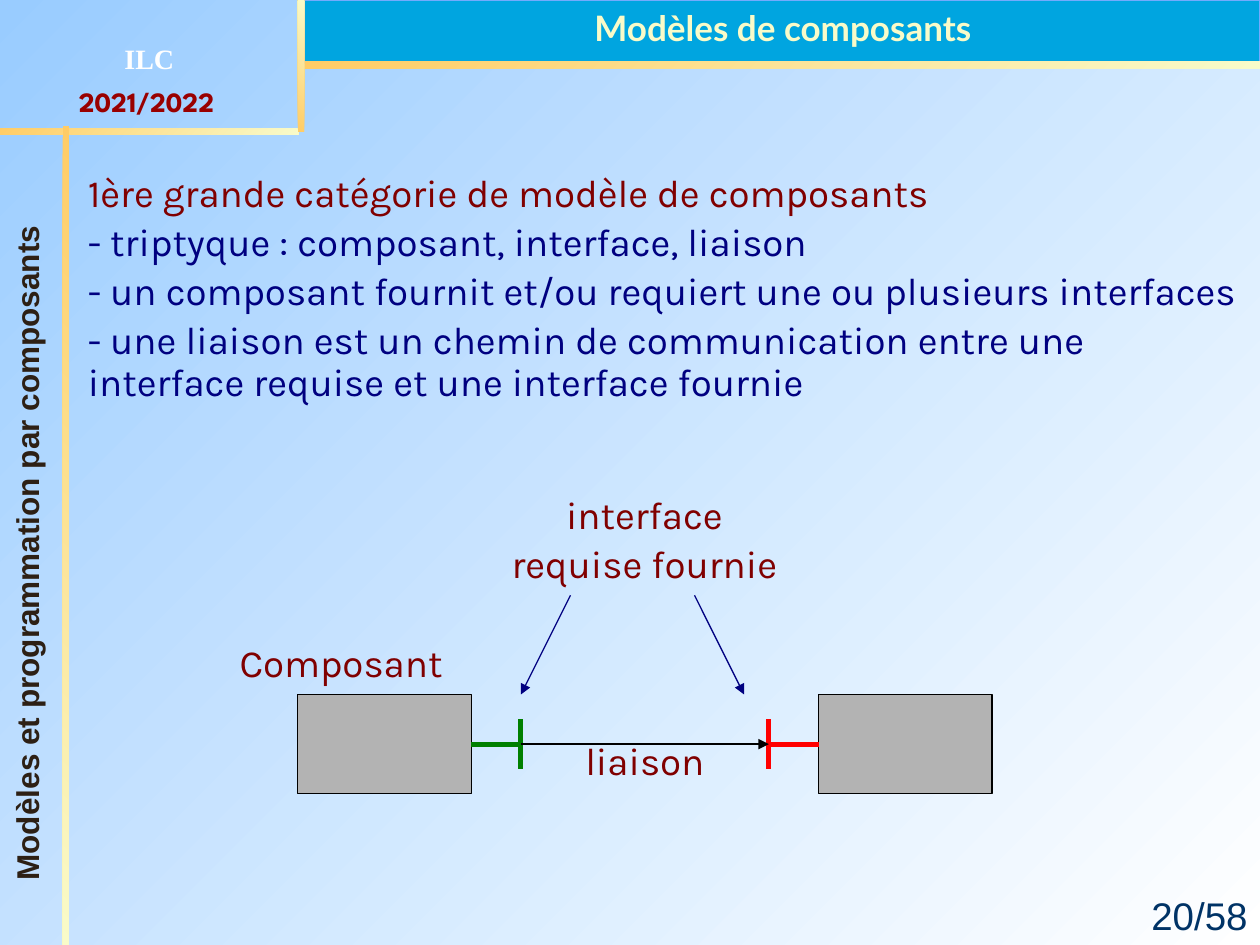
from lxml.etree import SubElement
from pptx import Presentation
from pptx.dml.color import RGBColor
from pptx.enum.shapes import MSO_CONNECTOR, MSO_SHAPE
from pptx.enum.text import MSO_ANCHOR, PP_ALIGN
from pptx.oxml.ns import qn
from pptx.util import Cm, Pt

NAVY, MAROON, BLACK = "000080", "800000", "000000"
GREEN, RED = "008000", "FF0000"


def paint(color, value):
    """Set a colour from a hex string."""
    color.rgb = RGBColor.from_string(value)


def cells(*values):
    """Turn counts of one-centimetre grid cells into lengths."""
    return [Cm(value) for value in values]


def fill_gradient(fill, start, end):
    """Blend two colours from the top left to the bottom right."""
    fill.gradient()
    fill.gradient_angle = 315
    for stop, value in zip(fill.gradient_stops, (start, end)):
        paint(stop.color, value)


def add_block(page, place, fill, line):
    """Add a flat rectangle with a thin outline."""
    block = page.shapes.add_shape(MSO_SHAPE.RECTANGLE, *cells(*place))
    block.shadow.inherit = False
    block.fill.solid()
    paint(block.fill.fore_color, fill)
    paint(block.line.color, line)
    block.line.width = Pt(0.75)


def add_bar(page, place, rotation=0):
    """Add a golden bar of the page frame."""
    bar = page.shapes.add_shape(MSO_SHAPE.RECTANGLE, *cells(*place))
    bar.shadow.inherit = False
    bar.rotation = rotation
    bar.line.fill.background()
    fill_gradient(bar.fill, "FFCC66", "F9FBC9")


def add_line(page, start, end, color, width=0.75, arrow=False):
    """Add a straight line, with an arrowhead at its end if asked."""
    line = page.shapes.add_connector(MSO_CONNECTOR.STRAIGHT, *cells(*start, *end))
    paint(line.line.color, color)
    line.line.width = Pt(width)
    properties = line.element.spPr
    if arrow:
        SubElement(properties.find(qn("a:ln")), qn("a:tailEnd"), type="triangle")
    SubElement(properties, qn("a:effectLst"))


def add_text(page, place, lines, size=22, font="Karla", bold=False,
             align=PP_ALIGN.CENTER, spacing=0.9, anchor=MSO_ANCHOR.TOP,
             rotation=0, wrap=True):
    """Add a text box from pairs of wording and colour."""
    box = page.shapes.add_textbox(*cells(*place))
    box.rotation = rotation
    frame = box.text_frame
    frame.word_wrap = wrap
    frame.vertical_anchor = anchor
    for index, (wording, color) in enumerate(lines):
        para = frame.add_paragraph() if index else frame.paragraphs[0]
        para.alignment = align
        para.line_spacing = spacing
        if index:
            para.space_before = Pt(size * 0.2)
        span = para.add_run()
        span.text = wording
        span.font.name = font
        span.font.size = Pt(size)
        span.font.bold = bold
        paint(span.font.color, color)


def add_frame(page):
    """Draw the bands, bars and fixed wording around the content."""
    add_block(page, (6.1, 0, 19.3, 1.27), "00A5E0", "74ABFC")
    add_bar(page, (6.15, 1.24, 19.25, 0.15))
    add_bar(page, (-0.08, 2.59, 6.1, 0.13))
    add_bar(page, (4.75, 1.27, 2.64, 0.13), 270)
    add_bar(page, (-6.93, 10.74, 16.51, 0.13), 90)
    add_text(page, (1.42, 0.71, 3.18, 0.94), [("ILC", "FFFFFF")], 16,
             "Times New Roman", True, spacing=1)
    add_text(page, (1.24, 1.57, 3.43, 0.94), [("2021/2022", "990000")], 16,
             "League Spartan", True, spacing=1)
    add_text(page, (21.59, 17.86, 3.81, 1.19), [("20/58", "003366")], 22,
             "Arial", align=PP_ALIGN.RIGHT, spacing=1)
    add_text(page, (-6.43, 10.64, 13.94, 1.02),
             [("Modèles et programmation par composants", "2D2015")], 18,
             "Arial", True, spacing=1, rotation=270, wrap=False)
    add_text(page, (6.17, 0, 19.23, 1.12), [("Modèles de composants", "F9FBC9")],
             20, "Lato", True, spacing=1, anchor=MSO_ANCHOR.MIDDLE)


def add_diagram(page):
    """Draw two components joined by a link between their interfaces."""
    for left, inner, port, color in ((6, 9.5, 10.5, GREEN), (16.5, 16.5, 15.5, RED)):
        add_block(page, (left, 14, 3.5, 2), "B3B3B3", BLACK)
        add_line(page, (inner, 15), (port, 15), color, 2.83)
        add_line(page, (port, 14.5), (port, 15.5), color, 2.83)
    add_line(page, (10.5, 15), (15.5, 15), BLACK, arrow=True)
    for start, end in ((11.5, 10.5), (14, 15)):
        add_line(page, (start, 12), (end, 14), NAVY, arrow=True)
    add_text(page, (2.74, 9.88, 20.5, 2.2),
             [("interface", MAROON), ("requise fournie", MAROON)])
    add_text(page, (4.58, 12.87, 5, 1.1), [("Composant", MAROON)],
             align=PP_ALIGN.LEFT)
    add_text(page, (10.5, 14.84, 5, 1.1), [("liaison", MAROON)])


def main():
    """Build the slide and save it."""
    deck = Presentation()
    deck.slide_width, deck.slide_height = cells(25.4, 19.05)
    page = deck.slides.add_slide(deck.slide_layouts[6])
    fill_gradient(page.background.fill, "99CCFF", "FFFFFF")
    add_frame(page)
    add_text(page, (1.52, 3.38, 23.88, 6.05), [
        ("1ère grande catégorie de modèle de composants", MAROON),
        ("- triptyque : composant, interface, liaison", NAVY),
        ("- un composant fournit et/ou requiert une ou plusieurs interfaces", NAVY),
        ("- une liaison est un chemin de communication entre une interface "
         "requise et une interface fournie", NAVY),
    ], align=PP_ALIGN.LEFT)
    add_diagram(page)
    deck.save("out.pptx")


if __name__ == "__main__":
    main()
